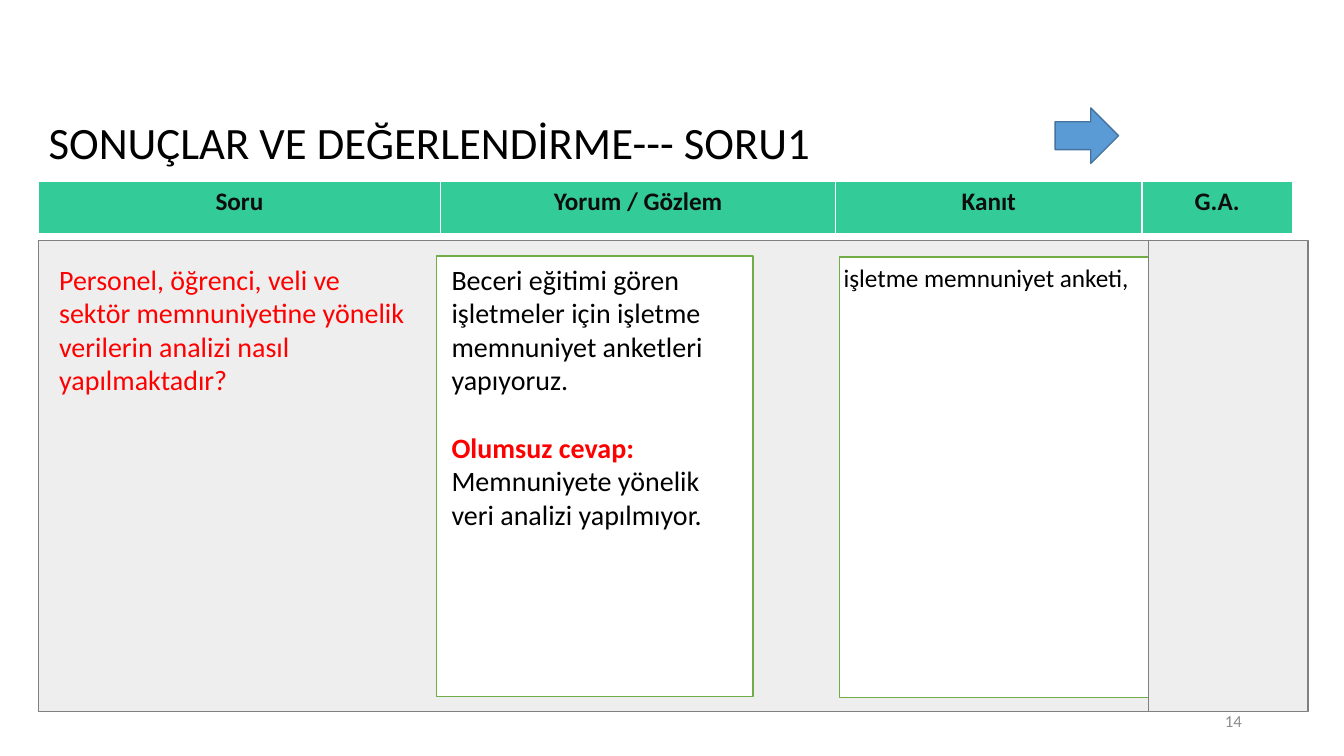
from lxml import etree
from pptx import Presentation
from pptx import util as u
from pptx.dml.color import RGBColor
from pptx.enum import shapes, text
from pptx.oxml.ns import qn

COLORS = {
    "ink": "000000", "heading": "0D0D0D", "red": "FF0000", "muted": "8C8C8C",
    "white": "FFFFFF", "panel": "EEEEEE", "panel_line": "808080",
    "teal": "33CC99", "green": "70AD47", "blue": "5B9BD5", "blue_line": "43739E",
}
FONT = "Calibri"
LEFT = 0.97
PANEL_TOP, PANEL_HEIGHT = 6.05, 11.89
CONTENT_TOP, CARD_HEIGHT = 6.48, 11.1


def rgb(name):
    return RGBColor.from_string(COLORS[name])


class SlideBuilder:
    def __init__(self, slide):
        self.slide = slide

    def style(self, paragraph, size, color="ink", bold=False, align=text.PP_ALIGN.LEFT):
        paragraph.alignment = align
        font = paragraph.font
        font.name, font.size, font.bold = FONT, u.Pt(size), bold
        font.color.rgb = rgb(color)

    def title(self, box, wording):
        heading = self.slide.shapes.title
        heading.left, heading.top, heading.width, heading.height = map(u.Cm, box)
        frame = heading.text_frame
        frame.text = wording
        frame.auto_size = text.MSO_AUTO_SIZE.NONE
        frame.vertical_anchor = text.MSO_ANCHOR.MIDDLE
        frame.paragraphs[0].line_spacing = 0.9
        self.style(frame.paragraphs[0], 32)

    def shape(self, box, fill, line=None, weight=1, kind=shapes.MSO_SHAPE.RECTANGLE):
        item = self.slide.shapes.add_shape(kind, *map(u.Cm, box))
        item.shadow.inherit = False
        item.fill.solid()
        item.fill.fore_color.rgb = rgb(fill)
        if line:
            item.line.color.rgb = rgb(line)
            item.line.width = u.Pt(weight)
        else:
            item.line.fill.background()
        return item

    def fill_text(self, item, lines, size, anchor=text.MSO_ANCHOR.TOP,
                  align=text.PP_ALIGN.LEFT):
        """Each line is (wording, color, bold, points before)."""
        frame = item.text_frame
        frame.word_wrap = True
        frame.vertical_anchor = anchor
        for i, (wording, color, bold, before) in enumerate(lines):
            paragraph = frame.add_paragraph() if i else frame.paragraphs[0]
            paragraph.text = wording
            self.style(paragraph, size, color, bold, align)
            if before:
                paragraph.space_before = u.Pt(before)

    def text_box(self, box, lines, size, **layout):
        item = self.slide.shapes.add_textbox(*map(u.Cm, box))
        self.fill_text(item, lines, size, **layout)

    def header_table(self, box, columns):
        table = self.slide.shapes.add_table(1, len(columns), *map(u.Cm, box)).table
        for i, (label, width) in enumerate(columns):
            table.columns[i].width = u.Cm(width)
            cell = table.cell(0, i)
            cell.text = label
            self.style(cell.text_frame.paragraphs[0], 18, "heading", True,
                       text.PP_ALIGN.CENTER)
            self.borders(cell)
            cell.fill.solid()
            cell.fill.fore_color.rgb = rgb("teal")

    def borders(self, cell):
        properties = cell._tc.get_or_add_tcPr()
        for side, weight in (("L", 1), ("R", 1), ("T", 1), ("B", 3)):
            line = etree.SubElement(properties, qn(f"a:ln{side}"), w=str(u.Pt(weight)))
            fill = etree.SubElement(line, qn("a:solidFill"))
            etree.SubElement(fill, qn("a:srgbClr"), val=COLORS["white"])


def main():
    deck = Presentation()
    deck.slide_width, deck.slide_height = u.Cm(33.87), u.Cm(19.05)
    page = SlideBuilder(deck.slides.add_slide(deck.slide_layouts[5]))

    # Background panel, title and page number
    page.shape((LEFT, PANEL_TOP, 32, PANEL_HEIGHT), "panel", "panel_line", 0.75)
    page.title((LEFT, 2.92, 25.22, 1.45), "SONUÇLAR VE DEĞERLENDİRME--- SORU1")
    page.text_box((23.93, 17.65, 7.62, 1.02), [("14", "muted", False, 0)], 12,
                  anchor=text.MSO_ANCHOR.MIDDLE, align=text.PP_ALIGN.RIGHT)

    # Column headings
    page.header_table((LEFT, 4.57, 31.6, 1.35), [
        ("Soru", 10.13), ("Yorum / Gözlem", 9.96), ("Kanıt", 7.72), ("G.A.", 3.79)])

    # Question
    question = page.shape((1.24, CONTENT_TOP, 9.25, 3.68), "panel")
    page.fill_text(question, [(
        "Personel, öğrenci, veli ve sektör memnuniyetine yönelik verilerin "
        "analizi nasıl yapılmaktadır?", "red", False, 0)], 20)

    # Observation
    page.shape((11, 6.45, 7.98, CARD_HEIGHT), "white", "green")
    page.text_box((11.13, CONTENT_TOP, 7.82, 7.09), [
        ("Beceri eğitimi gören işletmeler için işletme memnuniyet anketleri "
         "yapıyoruz.", "ink", False, 0),
        ("Olumsuz cevap:", "red", True, 24),
        ("Memnuniyete yönelik veri analizi yapılmıyor.", "ink", False, 0)], 20)

    # Evidence
    page.shape((21.16, CONTENT_TOP, 7.8, CARD_HEIGHT), "white", "green")
    page.text_box((21.01, CONTENT_TOP, 8.08, 1.02),
                  [("işletme memnuniyet anketi,", "ink", False, 0)], 18)

    # G.A. column and arrow
    page.shape((28.94, PANEL_TOP, 4.02, PANEL_HEIGHT), "panel", "panel_line", 0.75)
    page.shape((26.59, 2.72, 1.6, 1.4), "blue", "blue_line",
               kind=shapes.MSO_SHAPE.RIGHT_ARROW)

    deck.save("out.pptx")


if __name__ == "__main__":
    main()
